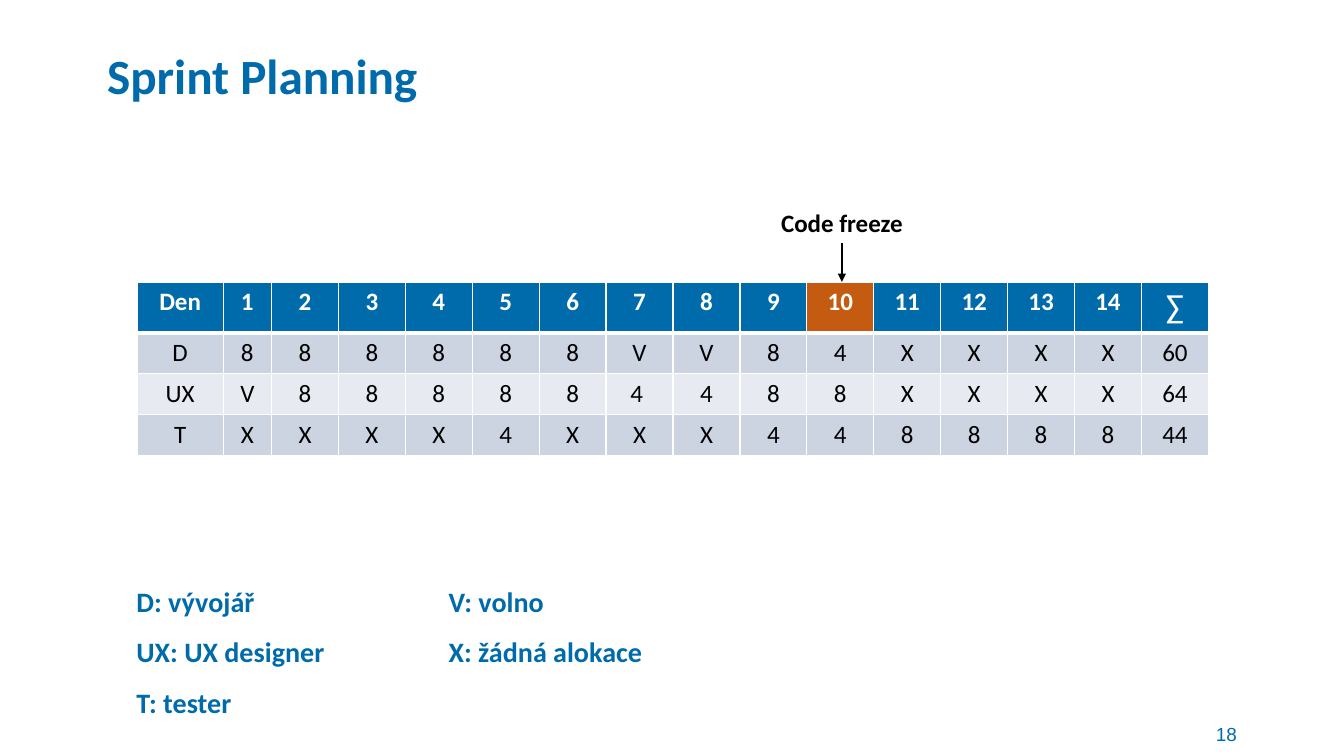
from dataclasses import dataclass

from lxml.etree import SubElement
from pptx import Presentation
from pptx.dml.color import RGBColor
from pptx.enum.shapes import MSO_CONNECTOR
from pptx.enum.text import MSO_ANCHOR as Anchor, MSO_AUTO_SIZE as AutoSize, PP_ALIGN as Align
from pptx.oxml.ns import qn
from pptx.util import Inches, Pt

BLUE = RGBColor(0x00, 0x6B, 0xAB)
ORANGE = RGBColor(0xC5, 0x5A, 0x11)
DARK_BAND = RGBColor(0xCC, 0xD4, 0xE2)
LIGHT_BAND = RGBColor(0xE7, 0xEB, 0xF1)
WHITE = RGBColor(0xFF, 0xFF, 0xFF)
BLACK = RGBColor(0x00, 0x00, 0x00)

SLIDE_WIDTH, SLIDE_HEIGHT = Inches(13.3), Inches(7.48)
GRID_COLUMNS = GRID_ROWS = 100

TABLE_LEFT, TABLE_TOP = 10.2, 37.3
DAY_COLUMN = 4.98
COLUMN_WIDTHS = [6.4, 3.6] + [DAY_COLUMN] * 14
ROW_HEIGHTS = [6.7] + [5.42] * 3
FREEZE_DAY = "10"
SUM_SIGN = "∑"
CAPACITY = [
    ["Den", *map(str, range(1, 15)), SUM_SIGN],
    "D,8,8,8,8,8,8,V,V,8,4,X,X,X,X,60".split(","),
    "UX,V,8,8,8,8,8,4 ,4,8,8,X,X,X,X,64".split(","),
    "T,X,X,X,X,4,X,X,X,4,4,8,8,8,8,44".split(","),
]


@dataclass(frozen=True)
class Area:
    left: float
    top: float
    width: float
    height: float


@dataclass(frozen=True)
class Style:
    size: float
    color: RGBColor
    bold: bool = False
    font: str = "Calibri"
    align: Align = Align.LEFT


@dataclass(frozen=True)
class Legend:
    placeholder: int
    area: Area
    lines: tuple[str, ...]


TITLE_STYLE = Style(35.1, BLUE, True)
LEGEND_STYLE = Style(20, BLUE, True)
LABEL_STYLE = Style(17.8, BLACK, True, align=Align.CENTER)
NUMBER_STYLE = Style(13.5, BLUE, font="Arial", align=Align.RIGHT)
HEADER_STYLE = Style(17.8, WHITE, True, align=Align.CENTER)
SUM_STYLE = Style(23.9, WHITE, align=Align.CENTER)
CELL_STYLE = Style(17.8, BLACK, align=Align.CENTER)

LEGENDS = (
    Legend(1, Area(10.15, 77.27, 22, 20.5), ("D: vývojář", "UX: UX designer", "T: tester")),
    Legend(2, Area(33.38, 77.27, 22, 20.5), ("V: volno", "X: žádná alokace")),
)


def across(columns: float) -> int:
    return round(SLIDE_WIDTH * columns / GRID_COLUMNS)


def down(rows: float) -> int:
    return round(SLIDE_HEIGHT * rows / GRID_ROWS)


def bounds(area: Area) -> tuple[int, int, int, int]:
    return across(area.left), down(area.top), across(area.width), down(area.height)


def place(shape, area: Area) -> None:
    shape.left, shape.top, shape.width, shape.height = bounds(area)


def format_paragraph(paragraph, style: Style) -> None:
    paragraph.alignment = style.align
    for run in paragraph.runs:
        run.font.name = style.font
        run.font.size = Pt(style.size)
        run.font.bold = style.bold
        run.font.color.rgb = style.color


def write(text_frame, text: str, style: Style, anchor: Anchor) -> None:
    text_frame.text = text
    text_frame.vertical_anchor = anchor
    for paragraph in text_frame.paragraphs:
        format_paragraph(paragraph, style)


def clear_margins(text_frame) -> None:
    text_frame.word_wrap = True
    text_frame.auto_size = AutoSize.NONE
    text_frame.margin_left = text_frame.margin_right = 0
    text_frame.margin_top = text_frame.margin_bottom = 0


def add_title(slide, area: Area, text: str) -> None:
    title = slide.shapes.title
    place(title, area)
    clear_margins(title.text_frame)
    write(title.text_frame, text, TITLE_STYLE, Anchor.BOTTOM)


def add_legend(slide, legend: Legend) -> None:
    body = slide.placeholders[legend.placeholder]
    place(body, legend.area)
    clear_margins(body.text_frame)
    write(body.text_frame, "\n".join(legend.lines), LEGEND_STYLE, Anchor.TOP)
    for index, paragraph in enumerate(body.text_frame.paragraphs):
        paragraph.space_before = Pt(12 if index else 0)
        properties = paragraph._p.get_or_add_pPr()
        properties.set("marL", "0")
        properties.set("indent", "0")
        SubElement(properties, qn("a:buNone"))


def add_borders(cell, top: float, bottom: float) -> None:
    properties = cell._tc.get_or_add_tcPr()
    for side, width in (("L", 1), ("R", 1), ("T", top), ("B", bottom)):
        line = SubElement(properties, qn(f"a:ln{side}"), w=str(Pt(width)))
        fill = SubElement(line, qn("a:solidFill"))
        SubElement(fill, qn("a:srgbClr"), val=str(WHITE))


def format_cell(cell, text: str, row: int) -> None:
    if row == 0:
        style = SUM_STYLE if text == SUM_SIGN else HEADER_STYLE
        color = ORANGE if text == FREEZE_DAY else BLUE
    else:
        style = CELL_STYLE
        color = DARK_BAND if row % 2 else LIGHT_BAND
    write(cell.text_frame, text, style, Anchor.TOP)
    add_borders(cell, top=3 if row == 1 else 1, bottom=1 if row else 3)
    cell.fill.solid()
    cell.fill.fore_color.rgb = color


def add_capacity_table(slide) -> None:
    area = Area(TABLE_LEFT, TABLE_TOP, sum(COLUMN_WIDTHS), sum(ROW_HEIGHTS))
    table = slide.shapes.add_table(len(CAPACITY), len(COLUMN_WIDTHS), *bounds(area)).table
    for column, width in zip(table.columns, COLUMN_WIDTHS):
        column.width = across(width)
    for index, (row, height) in enumerate(zip(table.rows, ROW_HEIGHTS)):
        row.height = down(height)
        for cell, text in zip(row.cells, CAPACITY[index]):
            format_cell(cell, text, index)


def add_code_freeze(slide, area: Area) -> None:
    label = slide.shapes.add_textbox(*bounds(area))
    label.text_frame.word_wrap = False
    write(label.text_frame, "Code freeze", LABEL_STYLE, Anchor.TOP)
    center = across(area.left + area.width / 2)
    arrow = slide.shapes.add_connector(
        MSO_CONNECTOR.STRAIGHT, center, down(area.top + area.height), center, down(TABLE_TOP)
    )
    arrow.begin_connect(label, 2)
    arrow.line.color.rgb = BLACK
    arrow.line.width = Pt(1.5)
    SubElement(arrow.line._get_or_add_ln(), qn("a:tailEnd"), type="triangle")
    SubElement(arrow._element.spPr, qn("a:effectLst"))


def add_slide_number(slide, area: Area, text: str) -> None:
    number = slide.shapes.add_textbox(*bounds(area))
    clear_margins(number.text_frame)
    write(number.text_frame, text, NUMBER_STYLE, Anchor.MIDDLE)


def main() -> None:
    presentation = Presentation()
    presentation.slide_width, presentation.slide_height = SLIDE_WIDTH, SLIDE_HEIGHT
    slide = presentation.slides.add_slide(presentation.slide_layouts.get_by_name("Two Content"))
    add_title(slide, Area(7.97, 2.81, 83.98, 10.96), "Sprint Planning")
    add_slide_number(slide, Area(88.5, 95.45, 3.53, 3.21), "18")
    add_capacity_table(slide)
    add_code_freeze(slide, Area(57.3, 26.74, 10.68, 5.35))
    for legend in LEGENDS:
        add_legend(slide, legend)
    presentation.save("out.pptx")


if __name__ == "__main__":
    main()
